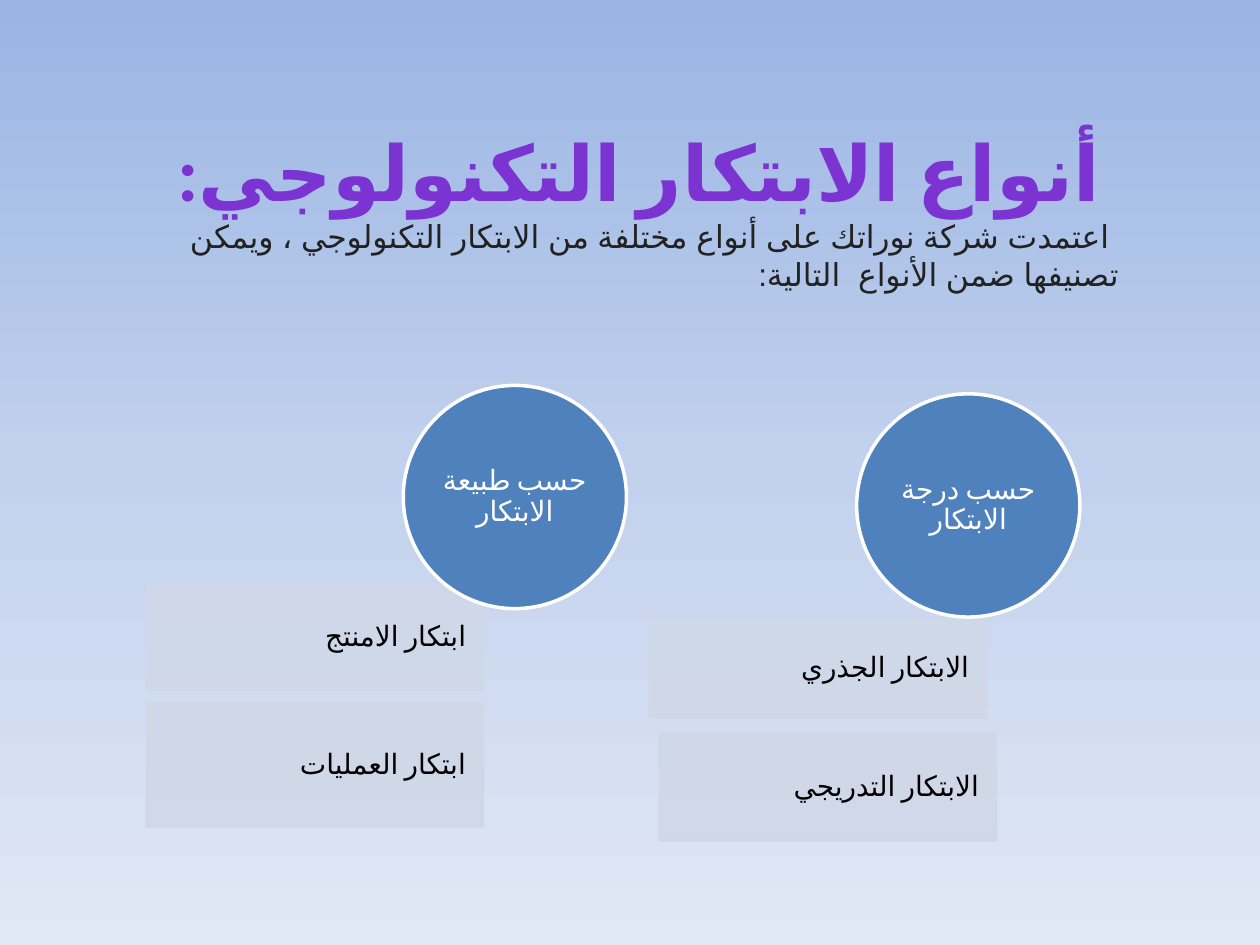
from copy import deepcopy

from lxml import etree
from pptx import Presentation
from pptx.dml.color import RGBColor
from pptx.enum import lang, shapes, text
from pptx.oxml import ns
from pptx.util import Cm, Pt

HUES = {
    "top": "9AB5E4", "mid": "C2D1ED", "low": "E1E8F5",
    "title": "7B34D2", "body": "222222", "bar": "D0D8E8",
    "disc": "4F81BD", "white": "FFFFFF", "black": "000000",
}
BAR = 6.76
DISC = 4.5


def hue(name):
    """Return the named colour."""
    return RGBColor.from_string(HUES[name])


def write(para, words, size=16, color="black", font="Calibri", bold=False,
          align=text.PP_ALIGN.RIGHT, rtl=True, gap=None):
    """Fill a paragraph with one formatted Arabic run."""
    para.alignment = align
    para.line_spacing = gap
    if rtl:
        para._p.get_or_add_pPr().set("rtl", "1")
    run = para.add_run()
    run.text = words
    run.font.size = Pt(size)
    run.font.bold = bold
    run.font.name = font
    run.font.language_id = lang.MSO_LANGUAGE_ID.ARABIC
    run.font.color.rgb = hue(color)
    etree.SubElement(run._r.rPr, ns.qn("a:cs")).set("typeface", font)


def inset(frame, left, top, right, low):
    """Wrap a text frame and set its margins."""
    frame.word_wrap = True
    frame.margin_left, frame.margin_top = Cm(left), Cm(top)
    frame.margin_right, frame.margin_bottom = Cm(right), Cm(low)


def fade(back, slide):
    """Paint the background from top to bottom."""
    back.fill.gradient()
    back.fill.gradient_angle = 270
    stops = slide._element.find(".//" + ns.qn("a:gsLst"))
    stops.insert(1, deepcopy(stops[0]))
    for stop, name, spot in zip(back.fill.gradient_stops,
                                ("top", "mid", "low"), (0, 0.5, 1)):
        stop.color.rgb = hue(name)
        stop.position = spot


def shape(slide, kind, box, fill, line):
    """Add a filled, outlined shape."""
    item = slide.shapes.add_shape(kind, *map(Cm, box))
    item.shadow.inherit = False
    item.fill.solid()
    item.fill.fore_color.rgb = hue(fill)
    item.line.color.rgb = hue(line)
    item.line.width = Pt(2)
    item.text_frame.vertical_anchor = text.MSO_ANCHOR.MIDDLE
    return item


def bar(slide, box, words):
    """Add a translucent bar with its label."""
    item = shape(slide, shapes.MSO_SHAPE.RECTANGLE, box, "bar", "bar")
    for tint in item._element.spPr.iter(ns.qn("a:srgbClr")):
        etree.SubElement(tint, ns.qn("a:alpha")).set("val", "90000")
    inset(item.text_frame, 1.07, 0.3, 0.33, 0.3)
    write(item.text_frame.paragraphs[0], words, gap=0.9)


def branch(slide, left, top, shift, head, bars, rtl=True):
    """Place bars and the disc above them from a corner."""
    for dx, dy, high, words in bars:
        bar(slide, (left + dx, top + dy, BAR, high), words)
    disc = shape(slide, shapes.MSO_SHAPE.OVAL,
                 (left + shift, top, DISC, DISC), "disc", "white")
    inset(disc.text_frame, 0, 0, 0, 0)
    write(disc.text_frame.paragraphs[0], head, color="white", rtl=rtl,
          align=text.PP_ALIGN.CENTER, gap=0.9)


def intro(slide, box):
    """Place the title and the sentence below it."""
    frame = slide.shapes.add_textbox(*map(Cm, box)).text_frame
    frame.word_wrap = True
    write(frame.paragraphs[0], "أنواع الابتكار التكنولوجي:", size=44,
          color="title", bold=True, align=text.PP_ALIGN.CENTER)
    write(frame.add_paragraph(),
          " اعتمدت شركة نوراتك على أنواع مختلفة من الابتكار التكنولوجي ، "
          "ويمكن تصنيفها ضمن الأنواع  التالية:",
          size=18, color="body", font="Arial")


def main():
    """Build and save the slide."""
    deck = Presentation()
    deck.slide_width, deck.slide_height = Cm(25.4), Cm(19.05)
    slide = deck.slides.add_slide(deck.slide_layouts[6])
    fade(slide.background, slide)
    intro(slide, (2.97, 2.39, 19.84, 3.68))
    branch(slide, 2.97, 7.77, 5.16, "حسب طبيعة الابتكار",
           [(0, 4.02, 2.11, "ابتكار الامنتج"),
            (0, 6.43, 2.46, "ابتكار العمليات")], rtl=False)
    branch(slide, 13.11, 7.94, 4.16, "حسب درجة الابتكار",
           [(0, 4.56, 1.96, "الابتكار الجذري"),
            (0.2, 6.87, 2.13, "الابتكار التدريجي")])
    deck.save("out.pptx")


if __name__ == "__main__":
    main()
